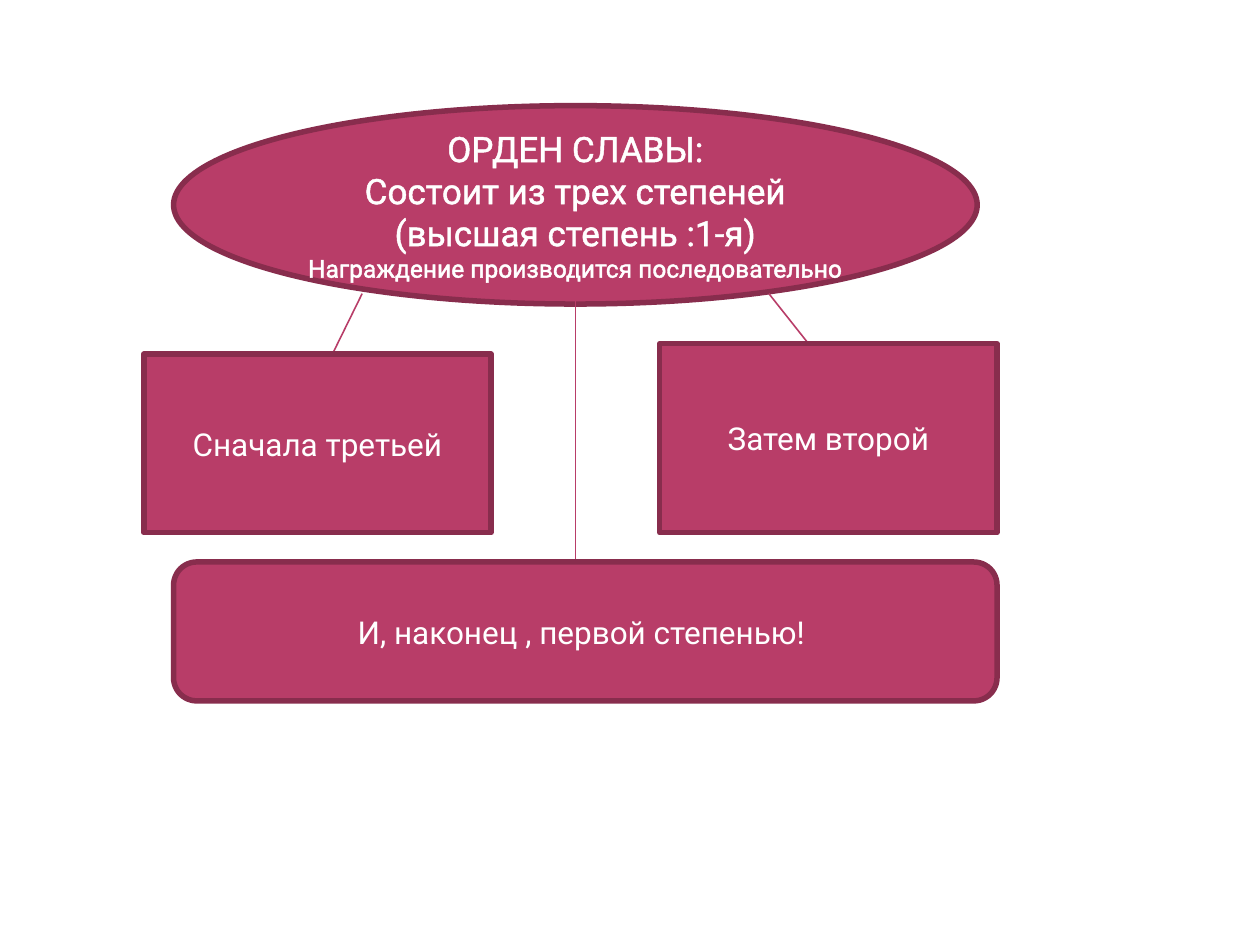
from typing import NamedTuple

from lxml import etree
from pptx import Presentation
from pptx.dml.color import RGBColor
from pptx.enum.shapes import MSO_CONNECTOR, MSO_SHAPE
from pptx.enum.text import MSO_ANCHOR, PP_ALIGN
from pptx.oxml.ns import qn
from pptx.util import Cm, Pt

OVAL, RECT, ROUND = MSO_SHAPE.OVAL, MSO_SHAPE.RECTANGLE, MSO_SHAPE.ROUNDED_RECTANGLE
STRAIGHT = MSO_CONNECTOR.STRAIGHT
CENTER, MIDDLE = PP_ALIGN.CENTER, MSO_ANCHOR.MIDDLE

FONT = "Roboto"
ROSE, WINE, WHITE = "B83D68", "882D4D", "FFFFFF"


class Line(NamedTuple):
    text: str
    size: float = 18
    edge: float = 0


class Box(NamedTuple):
    kind: int
    left: float
    top: float
    width: float
    height: float
    lines: list[Line]


class Link(NamedTuple):
    x1: float
    y1: float
    x2: float
    y2: float


ORDER = Box(OVAL, 3.5, 2.13, 16.2, 4, [
    Line("ОРДЕН СЛАВЫ:", 20, 1.45),
    Line("Состоит из трех степеней (высшая степень :1-я)", 20, 1.45),
    Line("Награждение производится последовательно", 14, 1.45),
])
STEPS = [
    Box(RECT, 2.9, 7.14, 7, 3.6, [Line("Сначала третьей")]),
    Box(RECT, 13.3, 6.93, 6.8, 3.81, [Line("Затем второй")]),
    Box(ROUND, 3.5, 11.33, 16.6, 2.8, [Line("И, наконец , первой степенью! ")]),
]
LINKS = [
    Link(7.3, 5.92, 6.7, 7.14),
    Link(11.6, 5.33, 11.6, 11.33),
    Link(15.5, 5.92, 16.3, 6.93),
]


def color(code: str) -> RGBColor:
    return RGBColor.from_string(code)


def add_edge(run, width: float, code: str) -> None:
    """Outline the letters of a run."""
    edge = etree.Element(qn("a:ln"), w=str(Pt(width)))
    fill = etree.SubElement(edge, qn("a:solidFill"))
    etree.SubElement(fill, qn("a:srgbClr"), val=code)
    run.font._element.insert(0, edge)


def write(para, text: str, *, size: float, edge: float = 0, code: str = WHITE) -> None:
    para.alignment = CENTER
    run = para.add_run()
    run.text = text
    run.font.name = FONT
    run.font.size = Pt(size)
    run.font.color.rgb = color(code)
    if edge:
        add_edge(run, edge, code)


def draw_box(slide, box: Box) -> None:
    shape = slide.shapes.add_shape(
        box.kind, Cm(box.left), Cm(box.top), Cm(box.width), Cm(box.height))
    shape.shadow.inherit = False
    shape.fill.solid()
    shape.fill.fore_color.rgb = color(ROSE)
    shape.line.color.rgb = color(WINE)
    shape.line.width = Pt(3.15)
    frame = shape.text_frame
    frame.word_wrap = True
    frame.vertical_anchor = MIDDLE
    for i, line in enumerate(box.lines):
        para = frame.add_paragraph() if i else frame.paragraphs[0]
        write(para, line.text, size=line.size, edge=line.edge)


def draw_link(slide, link: Link) -> None:
    wire = slide.shapes.add_connector(STRAIGHT, *(Cm(v) for v in link))
    wire.line.color.rgb = color(ROSE)
    wire.line.width = Pt(0.9)
    etree.SubElement(wire._element.spPr, qn("a:effectLst"))


def main() -> None:
    deck = Presentation()
    deck.slide_width, deck.slide_height = Cm(25.4), Cm(19.05)
    slide = deck.slides.add_slide(deck.slide_layouts[6])
    draw_box(slide, ORDER)
    for link in LINKS:
        draw_link(slide, link)
    for step in STEPS:
        draw_box(slide, step)
    deck.save("out.pptx")


if __name__ == "__main__":
    main()
